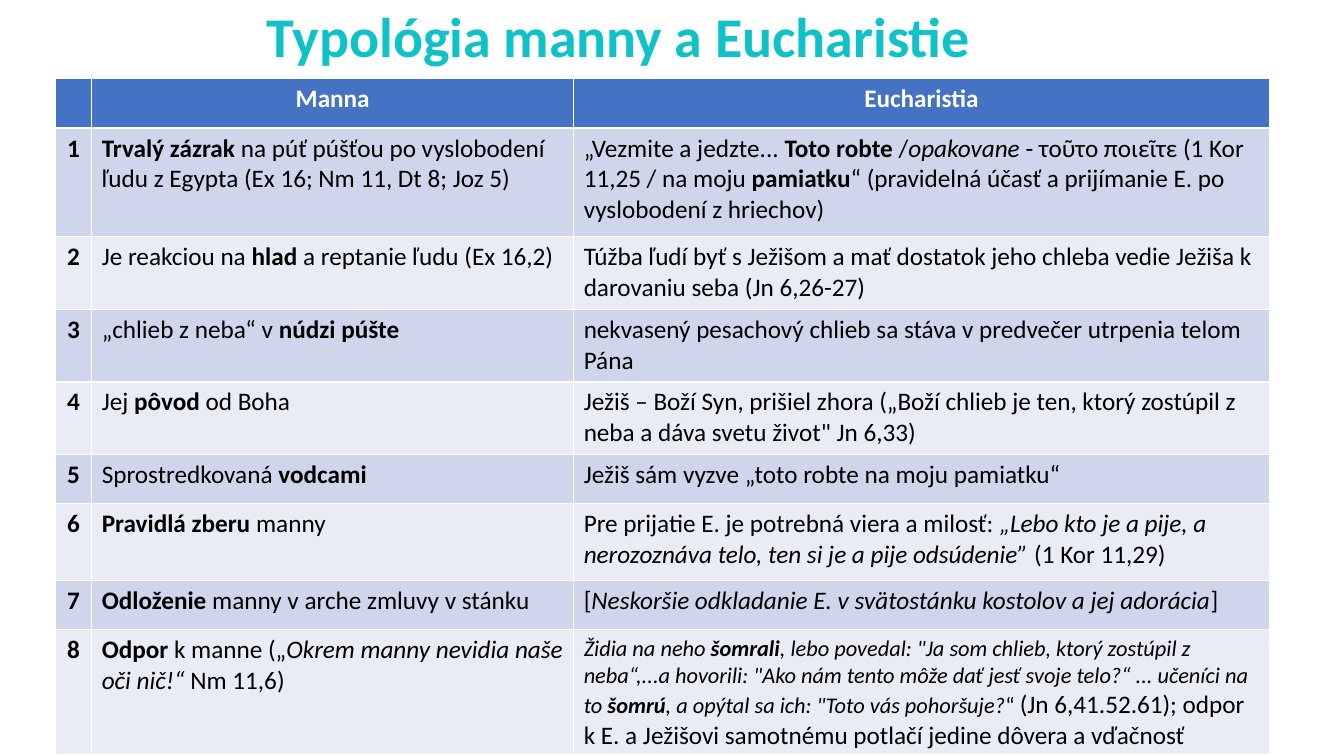
import pptx
import pptx.dml.color
import pptx.enum.text
import pptx.util

Inches = pptx.util.Inches
Pt = pptx.util.Pt
RGB = pptx.dml.color.RGBColor
ALIGN = pptx.enum.text.PP_ALIGN
ANCHOR = pptx.enum.text.MSO_ANCHOR

TEAL = RGB(0x0E, 0xC2, 0xC7)
BLUE = RGB(0x44, 0x72, 0xC4)
BANDS = (RGB(0xCF, 0xD5, 0xEA), RGB(0xE9, 0xEB, 0xF5))
WHITE = RGB(0xFF, 0xFF, 0xFF)
BLACK = RGB(0, 0, 0)

COLS = (0.36, 4.78, 6.9)
ROWS = (0.49, 1.08, 0.72, 0.72, 0.72, 0.49, 0.76, 0.49, 1.03)
HEADS = ("", "Manna", "Eucharistia")

# Each run is (text, marks): b = bold, i = italic, s = small
PAIRS = [
    ([("Trvalý zázrak ", "b"),
      ("na púť púšťou po vyslobodení ľudu z Egypta (Ex 16; Nm 11, Dt 8; Joz 5)", "")],
     [("„Vezmite a jedzte... ", ""), ("Toto robte ", "b"), ("/", ""),
      ("opakovane", "i"), (" - τοῦτο ποιεῖτε (1 Kor 11,25 / na moju ", ""),
      ("pamiatku", "b"),
      ("“ (pravidelná účasť a prijímanie E. po vyslobodení z hriechov)", "")]),
    ([("Je reakciou na ", ""), ("hlad", "b"), (" a reptanie ľudu (Ex 16,2)", "")],
     [("Túžba ľudí byť s Ježišom a mať dostatok jeho chleba vedie Ježiša k "
       "darovaniu seba (Jn 6,26-27)", "")]),
    ([("„chlieb z neba“ v ", ""), ("núdzi púšte", "b")],
     [("nekvasený pesachový chlieb sa stáva v predvečer utrpenia telom Pána", "")]),
    ([("Jej ", ""), ("pôvod", "b"), (" od Boha", "")],
     [("Ježiš – Boží Syn, prišiel zhora („Boží chlieb je ten, ktorý zostúpil z "
       "neba a dáva svetu život\" Jn 6,33)", "")]),
    ([("Sprostredkovaná ", ""), ("vodcami", "b")],
     [("Ježiš sám vyzve „toto robte na moju pamiatku“", "")]),
    ([("Pravidlá zberu ", "b"), ("manny", "")],
     [("Pre prijatie E. je potrebná viera a milosť: ", ""),
      ("„Lebo kto je a pije, a nerozoznáva telo, ten si je a pije odsúdenie” ", "i"),
      ("(1 Kor 11,29)", "")]),
    ([("Odloženie", "b"), (" manny v arche zmluvy v stánku", "")],
     [("[", ""),
      ("Neskoršie odkladanie E. v svätostánku kostolov a jej adorácia", "i"),
      ("]", "")]),
    ([("Odpor", "b"), (" k manne („", ""),
      ("Okrem manny nevidia naše oči nič!“ ", "i"), ("Nm 11,6)", "")],
     [("Židia na neho ", "is"), ("šomrali", "bis"),
      (", lebo povedal: \"Ja som chlieb, ktorý zostúpil z neba“,...a hovorili: "
       "\"Ako nám tento môže dať jesť svoje telo?“ ... učeníci na to ", "is"),
      ("šomrú", "bis"), (", a opýtal sa ich: \"Toto vás pohoršuje?", "is"),
      ("“ ", "s"),
      ("(Jn 6,41.52.61); odpor k E. a Ježišovi samotnému potlačí jedine "
       "dôvera a vďačnosť", "")]),
]


class Deck:
    face = "Calibri"
    size = 18
    small = 16

    def __init__(self):
        self.show = pptx.Presentation()
        self.show.slide_width = Inches(13.33)
        self.show.slide_height = Inches(7.5)
        self.slide = self.show.slides.add_slide(self.show.slide_layouts[6])

    def fill_para(self, para, runs, color, size, align):
        para.alignment = align
        for text, marks in runs:
            run = para.add_run()
            run.text = text
            font = run.font
            font.name = self.face
            font.size = Pt(self.small if "s" in marks else size)
            font.bold = "b" in marks
            font.italic = "i" in marks
            font.color.rgb = color

    def title(self, text, left, top, width, height):
        box = self.slide.shapes.add_textbox(
            Inches(left), Inches(top), Inches(width), Inches(height))
        frame = box.text_frame
        frame.word_wrap = True
        frame.vertical_anchor = ANCHOR.MIDDLE
        frame.margin_left = 0
        para = frame.paragraphs[0]
        para.line_spacing = 0.9
        self.fill_para(para, [(text, "b")], TEAL, 40, ALIGN.CENTER)

    def cell(self, cell, runs, fill, color, align):
        cell.fill.solid()
        cell.fill.fore_color.rgb = fill
        self.fill_para(cell.text_frame.paragraphs[0], runs, color,
                       self.size, align)

    def table(self, left, top):
        grid = self.slide.shapes.add_table(
            len(ROWS), len(COLS), Inches(left), Inches(top),
            Inches(sum(COLS)), Inches(sum(ROWS))).table
        for col, width in zip(grid.columns, COLS):
            col.width = Inches(width)
        for row, height in zip(grid.rows, ROWS):
            row.height = Inches(height)
        for cell, head in zip(grid.rows[0].cells, HEADS):
            runs = [(head, "b")] if head else []
            self.cell(cell, runs, BLUE, WHITE, ALIGN.CENTER)
        for num, pair in enumerate(PAIRS, 1):
            items = ([(str(num), "b")], *pair)
            for col, runs in enumerate(items):
                align = ALIGN.LEFT if col else ALIGN.CENTER
                self.cell(grid.cell(num, col), runs,
                          BANDS[(num - 1) % 2], BLACK, align)


def main():
    deck = Deck()
    deck.title("Typológia manny a Eucharistie", 0.92, 0.04, 10.53, 0.7)
    deck.table(0.55, 0.78)
    deck.show.save("out.pptx")


if __name__ == "__main__":
    main()
